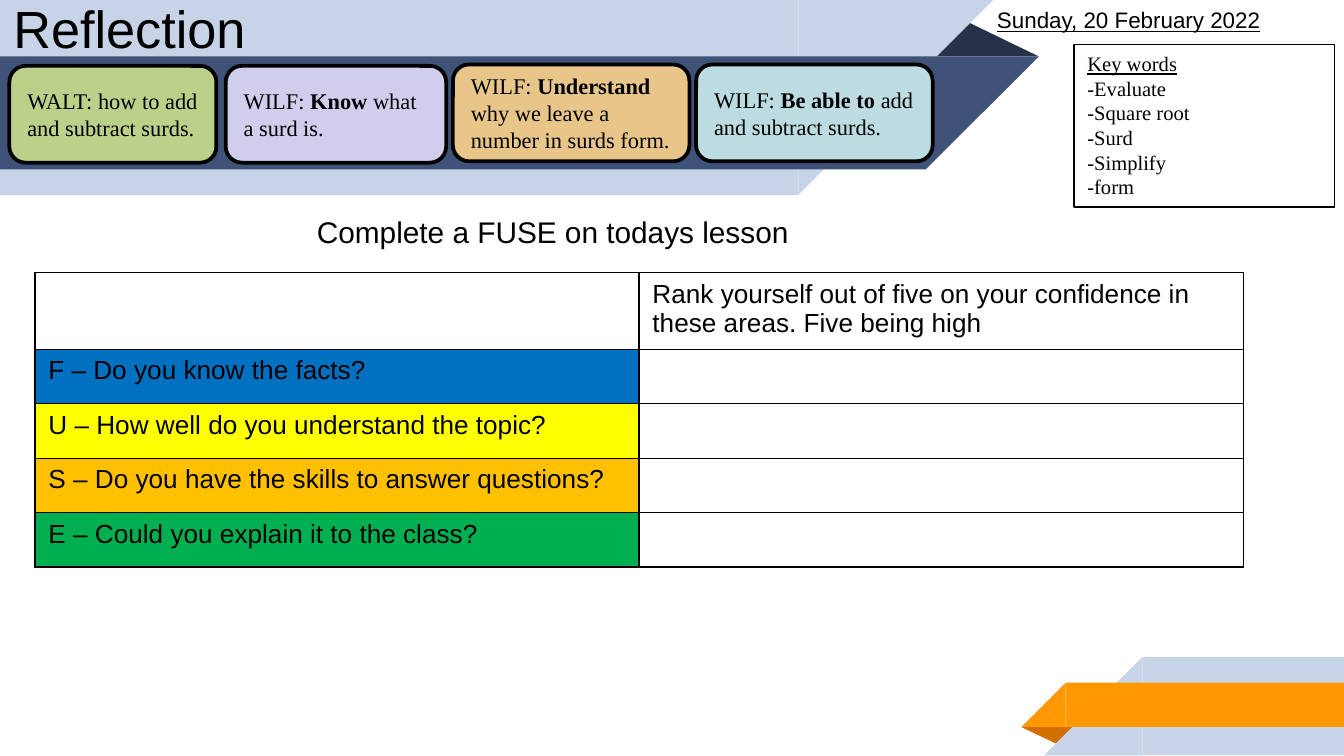
from dataclasses import dataclass
from typing import Any

from lxml.etree import SubElement
from pptx import Presentation
from pptx.dml.color import RGBColor
from pptx.enum.shapes import MSO_SHAPE
from pptx.enum.text import MSO_ANCHOR, MSO_AUTO_SIZE, PP_ALIGN
from pptx.oxml.ns import qn
from pptx.util import Inches, Pt

COLORS = {
    "black": "000000", "pale": "C7D3E6", "navy": "3F5378", "navy_fold": "263248",
    "orange": "FF9800", "orange_fold": "D26F00",
    "walt": "BBD189", "know": "D1CDED", "understand": "E8C588", "able": "BCDCE1",
    "facts": "0070C0", "topic": "FFFF00", "skills": "FFC000", "explain": "00B050",
}
SANS, SERIF = "Arial", "Times New Roman"
FRAME = {"word_wrap": True, "auto_size": MSO_AUTO_SIZE.NONE,
         "margin_left": Inches(0.1), "margin_right": Inches(0.1),
         "margin_top": Inches(0.05), "margin_bottom": Inches(0.05)}


@dataclass(frozen=True)
class Box:
    left: float
    top: float
    width: float
    height: float

    def lengths(self) -> tuple:
        return tuple(Inches(v) for v in (self.left, self.top, self.width, self.height))


@dataclass(frozen=True)
class Band:
    bar: Box
    slant_left: float
    color: str
    flip: str


@dataclass(frozen=True)
class Fold:
    box: Box
    color: str
    rotation: int


@dataclass(frozen=True)
class Goal:
    box: Box
    color: str
    lead: str
    stress: str = ""
    rest: str = ""


@dataclass(frozen=True)
class Question:
    text: str
    color: str


BANNER = [
    Fold(Box(6.88, 0.14, 0.85, 0.28), "navy_fold", 0),
    Band(Box(0, 0, 5.94, 1.45), 5.94, "pale", "flipV"),
    Band(Box(0, 0.42, 6.89, 0.84), 6.89, "navy", "flipV"),
    Fold(Box(7.6, 5.41, 0.43, 0.14), "orange_fold", 180),
    Band(Box(8.5, 4.89, 1.5, 0.73), 7.77, "pale", "flipH"),
    Band(Box(7.93, 5.08, 2.08, 0.33), 7.6, "orange", "flipH"),
]
GOALS = [
    Goal(Box(0.07, 0.49, 1.54, 0.72), "walt", "WALT: how to add and subtract surds."),
    Goal(Box(1.68, 0.49, 1.64, 0.72), "know", "WILF: ", "Know", " what a surd is."),
    Goal(Box(3.37, 0.48, 1.76, 0.72), "understand", "WILF: ", "Understand",
         " why we leave a number in surds form."),
    Goal(Box(5.18, 0.48, 1.76, 0.72), "able", "WILF: ", "Be able to ",
         "add and subtract surds."),
]
QUESTIONS = [
    Question("F – Do you know the facts?", "facts"),
    Question("U – How well do you understand the topic?", "topic"),
    Question("S – Do you have the skills to answer questions?", "skills"),
    Question("E – Could you explain it to the class?", "explain"),
]
KEY_WORDS = ["-Evaluate", "-Square root", "-Surd", "-Simplify", "-form"]


def rgb(name: str) -> RGBColor:
    return RGBColor.from_string(COLORS[name])


def apply(target: Any, values: dict) -> None:
    for name, value in values.items():
        setattr(target, name, value)


def write(paragraph: Any, text: str, size: float, face: str, **extra: bool) -> None:
    run = paragraph.add_run()
    run.text = text
    apply(run.font, {"size": Pt(size), "name": face, **extra})
    run.font.color.rgb = rgb("black")


def place(shape: Any, box: Box) -> None:
    apply(shape, dict(zip(("left", "top", "width", "height"), box.lengths())))


def add_filled(slide: Any, kind: MSO_SHAPE, box: Box, color: str) -> Any:
    shape = slide.shapes.add_shape(kind, *box.lengths())
    shape.shadow.inherit = False
    shape.fill.solid()
    shape.fill.fore_color.rgb = rgb(color)
    shape.line.fill.background()
    return shape


def add_band(slide: Any, band: Band) -> None:
    add_filled(slide, MSO_SHAPE.RECTANGLE, band.bar, band.color)
    side = band.bar.height
    slant_box = Box(band.slant_left, band.bar.top, side, side)
    slant = add_filled(slide, MSO_SHAPE.RIGHT_TRIANGLE, slant_box, band.color)
    slant.element.spPr.find(qn("a:xfrm")).set(band.flip, "1")


def add_fold(slide: Any, fold: Fold) -> None:
    triangle = add_filled(slide, MSO_SHAPE.ISOSCELES_TRIANGLE, fold.box, fold.color)
    triangle.adjustments[0] = 0.32
    triangle.rotation = fold.rotation


def add_label(slide: Any, box: Box, text: str, size: float, **extra: bool) -> None:
    frame = slide.shapes.add_textbox(*box.lengths()).text_frame
    apply(frame, FRAME)
    write(frame.paragraphs[0], text, size, SANS, **extra)


def add_goal(slide: Any, goal: Goal) -> None:
    card = add_filled(slide, MSO_SHAPE.ROUNDED_RECTANGLE, goal.box, goal.color)
    card.line.color.rgb = rgb("black")
    card.line.width = Pt(2)
    apply(card.text_frame, {**FRAME, "vertical_anchor": MSO_ANCHOR.MIDDLE})
    sentence = card.text_frame.paragraphs[0]
    sentence.alignment = PP_ALIGN.LEFT
    for text, bold in ((goal.lead, False), (goal.stress, True), (goal.rest, False)):
        if text:
            write(sentence, text, 12, SERIF, bold=bold)


def fill_title(title: Any) -> None:
    place(title, Box(0, -0.08, 4.94, 0.57))
    apply(title.text_frame, {**FRAME, "vertical_anchor": MSO_ANCHOR.TOP})
    heading = title.text_frame.paragraphs[0]
    heading.alignment = PP_ALIGN.LEFT
    write(heading, "Reflection", 28, SANS)


def fill_key_words(body: Any) -> None:
    place(body, Box(7.99, 0.33, 1.94, 1.21))
    body.line.color.rgb = rgb("black")
    body.line.width = Pt(0.75)
    frame = body.text_frame
    apply(frame, {**FRAME, "vertical_anchor": MSO_ANCHOR.TOP})
    for index, word in enumerate(["Key words", *KEY_WORDS]):
        entry = frame.add_paragraph() if index else frame.paragraphs[0]
        properties = entry._p.get_or_add_pPr()
        properties.set("marL", "0")
        properties.set("indent", "0")
        SubElement(properties, qn("a:buNone"))
        entry.space_before = Pt(0)
        write(entry, word, 11, SERIF, underline=index == 0)


def border(cell: Any) -> None:
    properties = cell._tc.get_or_add_tcPr()
    for position, side in enumerate(("lnL", "lnR", "lnT", "lnB")):
        edge = SubElement(properties, qn(f"a:{side}"), w=str(Pt(0.75)))
        fill = SubElement(edge, qn("a:solidFill"))
        SubElement(fill, qn("a:srgbClr"), val=COLORS["black"])
        properties.insert(position, edge)


def add_fuse_table(slide: Any) -> None:
    box, header_height = Box(0.26, 2.03, 8.99, 2.19), 0.57
    table = slide.shapes.add_table(len(QUESTIONS) + 1, 2, *box.lengths()).table
    apply(table, {"first_row": False, "horz_banding": False})
    table.rows[0].height = Inches(header_height)
    for cell in table.iter_cells():
        cell.fill.background()
        border(cell)
        cell.text_frame.paragraphs[0].font.size = Pt(14)
    write(table.cell(0, 1).text_frame.paragraphs[0],
          "Rank yourself out of five on your confidence in these areas. Five being high",
          14, SANS)
    for row, question in enumerate(QUESTIONS, start=1):
        table.rows[row].height = Inches((box.height - header_height) / len(QUESTIONS))
        cell = table.cell(row, 0)
        cell.fill.solid()
        cell.fill.fore_color.rgb = rgb(question.color)
        write(cell.text_frame.paragraphs[0], question.text, 14, SANS)


def main() -> None:
    deck = Presentation()
    apply(deck, {"slide_width": Inches(10), "slide_height": Inches(10 * 9 / 16)})
    slide = deck.slides.add_slide(deck.slide_layouts[1])
    title, key_words = slide.shapes.title, slide.placeholders[1]
    for part in BANNER:
        if isinstance(part, Band):
            add_band(slide, part)
        else:
            add_fold(slide, part)
    for placeholder in (title, key_words):
        slide.shapes.element.append(placeholder.element)
    fill_title(title)
    fill_key_words(key_words)
    add_label(slide, Box(7.32, 0, 4.16, 0.4), "Sunday, 20 February 2022", 12, underline=True)
    add_fuse_table(slide)
    add_label(slide, Box(2.26, 1.54, 4.46, 0.37), "Complete a FUSE on todays lesson", 16)
    for goal in GOALS:
        add_goal(slide, goal)
    deck.save("out.pptx")


if __name__ == "__main__":
    main()
